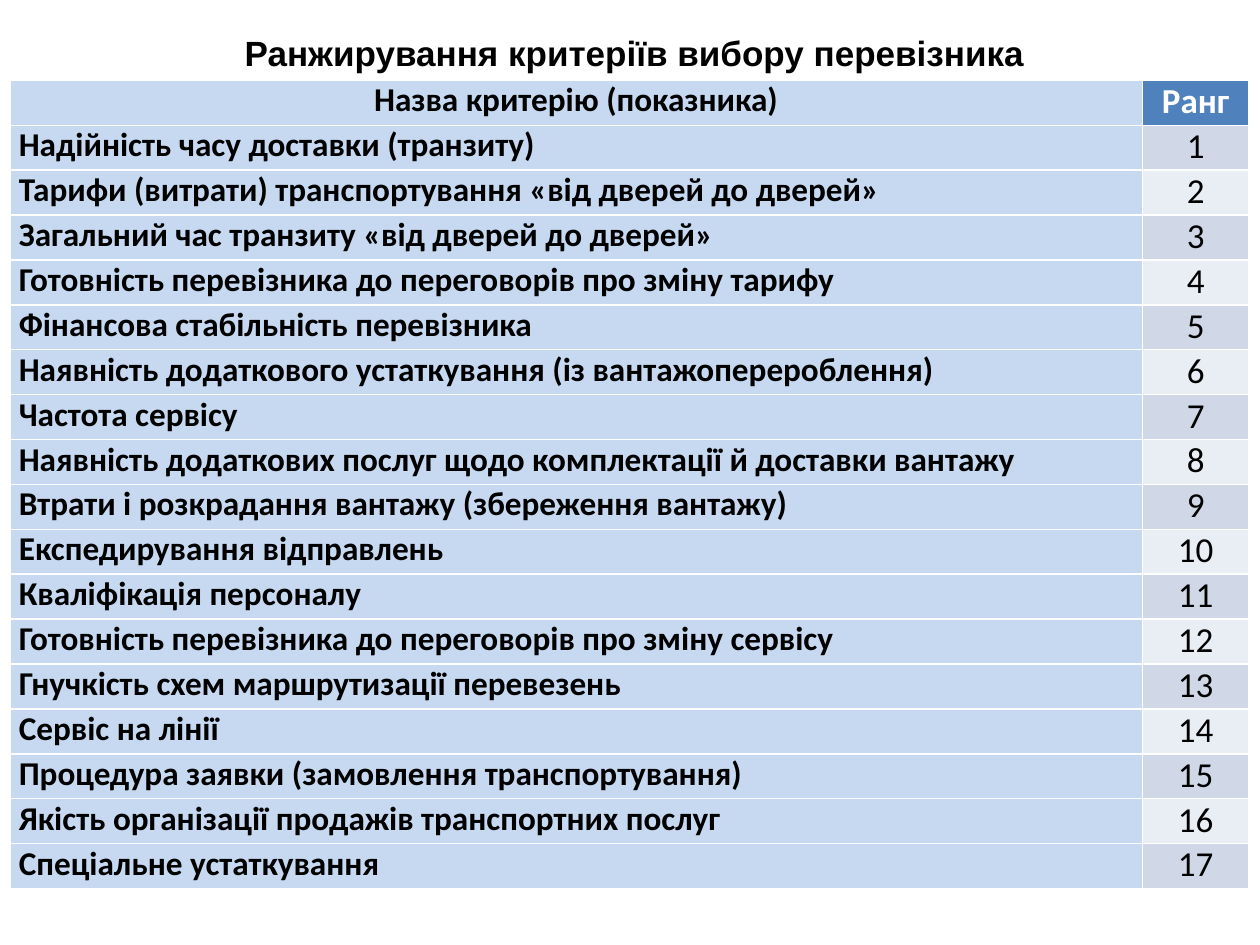
from dataclasses import dataclass

from pptx import Presentation
from pptx.dml.color import RGBColor
from pptx.enum.text import MSO_ANCHOR, MSO_AUTO_SIZE, PP_ALIGN
from pptx.util import Cm, Pt


@dataclass(frozen=True)
class Theme:
    """Colours, fonts and type sizes of the slide."""
    ink: str = "000000"
    paper: str = "FFFFFF"
    accent: str = "4F81BD"
    criterion: str = "C6D9F1"
    odd_rank: str = "D0D8E8"
    even_rank: str = "E9EDF4"
    title_font: str = "Arial"
    body_font: str = "Calibri"
    large: int = 20
    medium: int = 19


class SlideBuilder:
    """Places styled elements on the current slide."""

    def __init__(self, slide, theme):
        self.slide = slide
        self.theme = theme

    def style(self, frame, font, size, color, bold, align):
        """Format the only paragraph of a text frame."""
        paragraph = frame.paragraphs[0]
        paragraph.alignment = align
        for run in paragraph.runs:
            run.font.name = font
            run.font.size = Pt(size)
            run.font.bold = bold
            run.font.color.rgb = RGBColor.from_string(color)

    def title(self, wording, left, top, width, height, indent):
        """Fill and move the title placeholder."""
        heading = self.slide.shapes.title
        heading.left, heading.top = Cm(left), Cm(top)
        heading.width, heading.height = Cm(width), Cm(height)
        frame = heading.text_frame
        frame.text = wording
        frame.word_wrap = True
        frame.auto_size = MSO_AUTO_SIZE.SHAPE_TO_FIT_TEXT
        frame.vertical_anchor = MSO_ANCHOR.MIDDLE
        frame.paragraphs[0]._p.get_or_add_pPr().set("indent", str(Cm(indent)))
        self.style(frame, self.theme.title_font, self.theme.large,
                   self.theme.ink, True, PP_ALIGN.CENTER)

    def cell(self, cell, wording, fill, size, color, bold, align):
        """Write and colour one table cell."""
        cell.margin_left = cell.margin_right = Cm(0.18)
        cell.margin_top = cell.margin_bottom = 0
        cell.fill.solid()
        cell.fill.fore_color.rgb = RGBColor.from_string(fill)
        cell.text_frame.text = wording
        self.style(cell.text_frame, self.theme.body_font, size, color, bold, align)

    def ranking(self, headings, criteria, left, top, widths, height):
        """Add a table that numbers the criteria in order."""
        theme = self.theme
        table = self.slide.shapes.add_table(
            len(criteria) + 1, len(widths), Cm(left), Cm(top),
            Cm(sum(widths)), Cm(height)).table
        for column, width in zip(table.columns, widths):
            column.width = Cm(width)
        criterion_heading, rank_heading = headings
        self.cell(table.cell(0, 0), criterion_heading, theme.criterion,
                  theme.medium, theme.ink, True, PP_ALIGN.CENTER)
        self.cell(table.cell(0, 1), rank_heading, theme.accent,
                  theme.large, theme.paper, True, PP_ALIGN.CENTER)
        for rank, criterion in enumerate(criteria, start=1):
            self.cell(table.cell(rank, 0), criterion, theme.criterion,
                      theme.medium, theme.ink, True, PP_ALIGN.LEFT)
            self.cell(table.cell(rank, 1), str(rank),
                      theme.odd_rank if rank % 2 else theme.even_rank,
                      theme.large, theme.ink, False, PP_ALIGN.CENTER)


CRITERIA = [
    "Надійність часу доставки (транзиту)",
    "Тарифи (витрати) транспортування «від дверей до дверей»",
    "Загальний час транзиту «від дверей до дверей»",
    "Готовність перевізника до переговорів про зміну тарифу",
    "Фінансова стабільність перевізника",
    "Наявність додаткового устаткування (із вантажоперероблення)",
    "Частота сервісу",
    "Наявність додаткових послуг щодо комплектації й доставки вантажу",
    "Bтрати і розкрадання вантажу (збереження вантажу)",
    "Експедирування відправлень",
    "Кваліфікація персоналу",
    "Готовність перевізника до переговорів про зміну сервісу",
    "Гнучкість схем маршрутизації перевезень",
    "Cервіс на лінії",
    "Процедура заявки (замовлення транспортування)",
    "Якість організації продажів транспортних послуг",
    "Спеціальне устаткування",
]


def main():
    """Build and save the carrier ranking slide."""
    presentation = Presentation()
    presentation.slide_width, presentation.slide_height = Cm(25.4), Cm(19.05)
    title_only = presentation.slide_layouts.get_by_name("Title Only")
    builder = SlideBuilder(presentation.slides.add_slide(title_only), Theme())
    builder.title("Ранжирування критеріїв вибору перевізника ",
                  left=0.2, top=0.5, width=24.13, height=1.11, indent=1.25)
    builder.ranking(("Назва критерію (показника)", "Ранг"), CRITERIA,
                    left=0.2, top=1.62, widths=(22.83, 2.15), height=16.3)
    presentation.save("out.pptx")


if __name__ == "__main__":
    main()
